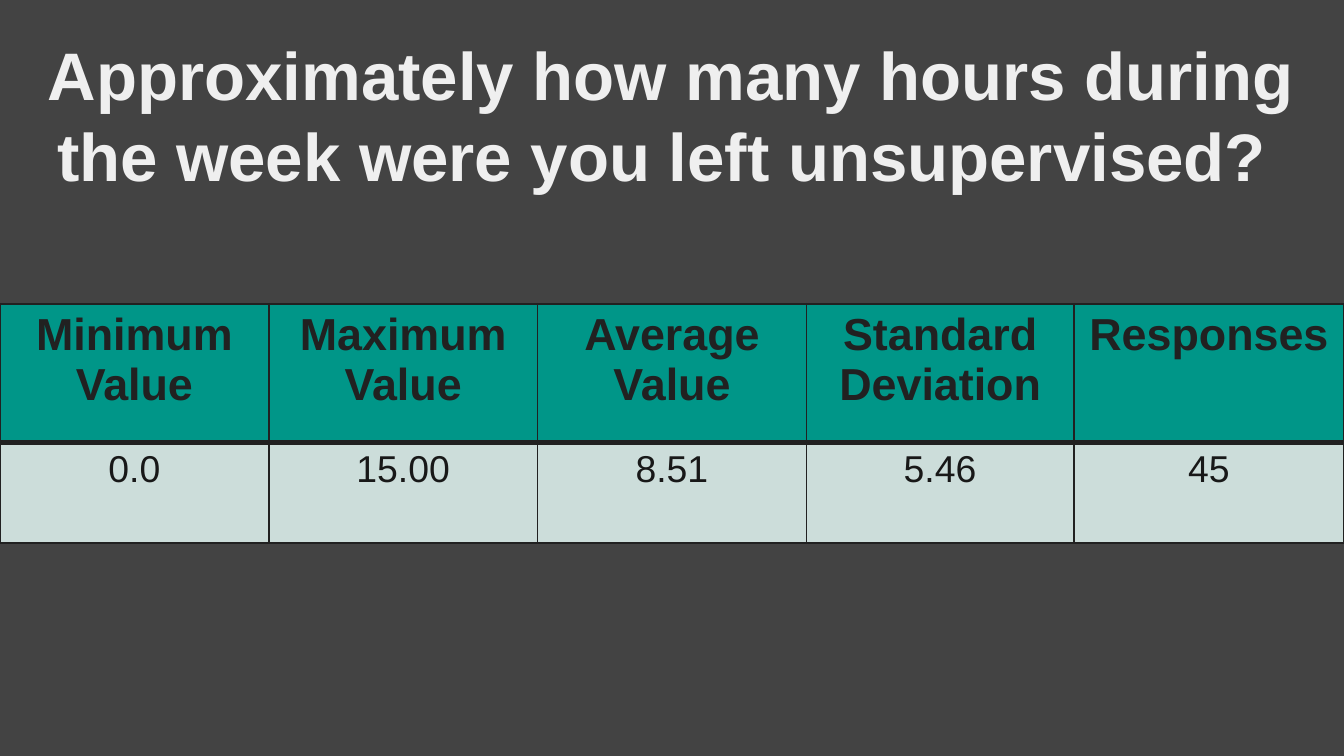
import pptx
import pptx.dml.color
import pptx.enum.text
import pptx.oxml
import pptx.oxml.ns
import pptx.util

COLORS = {
    "background": "434343",
    "title": "EFEFEF",
    "header_fill": "009688",
    "header_text": "212121",
    "value_fill": "CCDDDA",
    "value_text": "181818",
    "border": "212121",
}
FONT = "Arial"
SLIDE_WIDTH = 10
SLIDE_HEIGHT = SLIDE_WIDTH * 9 / 16
COLUMN_WIDTHS = [2, 2, 2, 1.99, 2.01]
ROW_HEIGHTS = [1.03, 0.75]
TABLE_TOP = 2.26
HEADERS = ["Minimum Value", "Maximum Value", "Average Value",
           "Standard Deviation", "Responses"]
VALUES = ["0.0", "15.00", "8.51", "5.46", "45"]


def rgb(name):
    return pptx.dml.color.RGBColor.from_string(COLORS[name])


def write_centered(frame, text, size, color, bold):
    para = frame.paragraphs[0]
    para.text = text
    para.alignment = pptx.enum.text.PP_ALIGN.CENTER
    para.font.name = FONT
    para.font.size = pptx.util.Pt(size)
    para.font.bold = bold
    para.font.color.rgb = rgb(color)


def add_title(page, text):
    inches = pptx.util.Inches
    box = page.shapes.add_textbox(
        inches(0.2), inches(0.14), inches(9.59), inches(1.42))
    frame = box.text_frame
    frame.word_wrap = True
    frame.vertical_anchor = pptx.enum.text.MSO_ANCHOR.MIDDLE
    frame.margin_left = frame.margin_right = inches(0.1)
    frame.margin_top = frame.margin_bottom = inches(0.1)
    write_centered(frame, text, 36, "title", True)


def set_borders(cell, top_width, bottom_width):
    """Outline a cell; border lines must come before its fill."""
    properties = cell._tc.get_or_add_tcPr()
    widths = {"lnL": 1, "lnR": 1, "lnT": top_width, "lnB": bottom_width}
    for index, (side, width) in enumerate(widths.items()):
        line = pptx.oxml.parse_xml(
            f'<a:{side} {pptx.oxml.ns.nsdecls("a")} w="{pptx.util.Pt(width)}">'
            f'<a:solidFill><a:srgbClr val="{COLORS["border"]}"/></a:solidFill>'
            f'</a:{side}>')
        properties.insert(index, line)


def fill_row(row, texts, kind, size, bold, top_width, bottom_width):
    for cell, text in zip(row.cells, texts):
        write_centered(cell.text_frame, text, size, f"{kind}_text", bold)
        cell.fill.solid()
        cell.fill.fore_color.rgb = rgb(f"{kind}_fill")
        set_borders(cell, top_width, bottom_width)


def add_statistics_table(page):
    inches = pptx.util.Inches
    table = page.shapes.add_table(
        len(ROW_HEIGHTS), len(COLUMN_WIDTHS), 0, inches(TABLE_TOP),
        inches(sum(COLUMN_WIDTHS)), inches(sum(ROW_HEIGHTS))).table
    for column, width in zip(table.columns, COLUMN_WIDTHS):
        column.width = inches(width)
    for row, height in zip(table.rows, ROW_HEIGHTS):
        row.height = inches(height)
    # Both rows share the heavy rule under the header
    fill_row(table.rows[0], HEADERS, "header", 24, True, 1, 3)
    fill_row(table.rows[1], VALUES, "value", 20, False, 3, 1)


def main():
    deck = pptx.Presentation()
    deck.slide_width = pptx.util.Inches(SLIDE_WIDTH)
    deck.slide_height = pptx.util.Inches(SLIDE_HEIGHT)
    page = deck.slides.add_slide(deck.slide_layouts[6])
    page.background.fill.solid()
    page.background.fill.fore_color.rgb = rgb("background")

    # Survey question
    add_title(page, "Approximately how many hours during the week "
                    "were you left unsupervised? ")
    # Summary of the answers
    add_statistics_table(page)
    deck.save("out.pptx")


if __name__ == "__main__":
    main()
